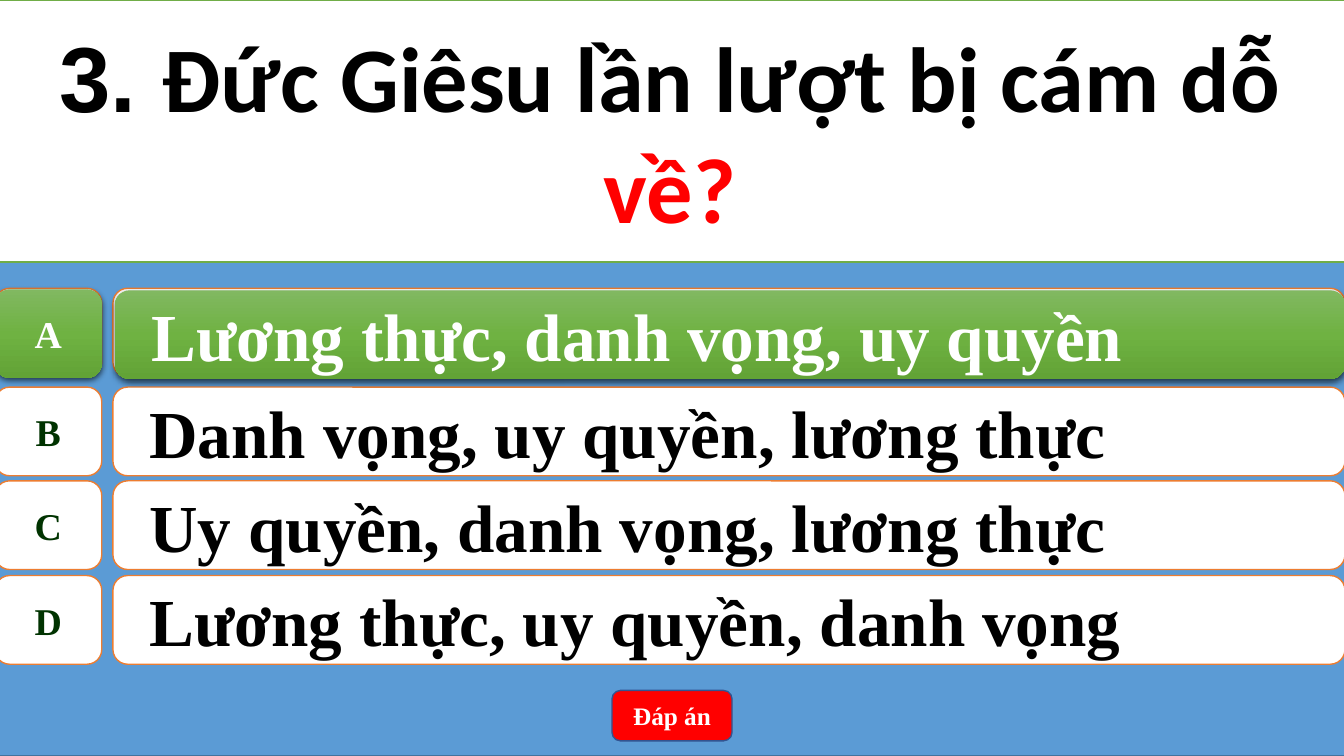
from copy import deepcopy
from pptx import Presentation
from pptx.dml.color import RGBColor
from pptx.enum.shapes import MSO_SHAPE as Shape
from pptx.enum.text import MSO_ANCHOR as Anchor, PP_ALIGN as Align
from pptx.oxml import parse_xml
from pptx.util import Inches, Pt

WHITE = RGBColor(0xFF, 0xFF, 0xFF)
BLACK = RGBColor(0, 0, 0)
RED = RGBColor(0xFF, 0, 0)
BLUE = RGBColor(0x5B, 0x9B, 0xD5)
NAVY = RGBColor(0x43, 0x73, 0x9E)
INDIGO = RGBColor(0x32, 0x54, 0x91)
ORANGE = RGBColor(0xED, 0x7D, 0x31)
FOREST = RGBColor(0, 0x33, 0)
GREEN = RGBColor(0x70, 0xAD, 0x47)
GREENS = [RGBColor(0x81, 0xB8, 0x61), RGBColor(0x6F, 0xB2, 0x42),
          RGBColor(0x62, 0xA3, 0x36)]
SERIF = "Times New Roman"
LEFT, WIDE = -0.05, 13.39
SHADOW = (
    '<a:effectLst xmlns:a="http://schemas.openxmlformats.org/drawingml/2006/main">'
    '<a:outerShdw blurRad="57150" dist="19050" dir="5400000" algn="ctr" '
    'rotWithShape="0"><a:srgbClr val="000000"><a:alpha val="63000"/></a:srgbClr>'
    '</a:outerShdw></a:effectLst>')

ANSWERS = [
    ("A", "Lương thực, danh vọng, uy quyền", 2.86),
    ("B", "Danh vọng, uy quyền, lương thực", 3.84),
    ("C", "Uy quyền, danh vọng, lương thực", 4.77),
    ("D", "Lương thực, uy quyền, danh vọng", 5.71),
]


def add_box(shapes, kind, box, fill, line):
    shape = shapes.add_shape(kind, *(Inches(n) for n in box))
    shape.shadow.inherit = False
    shape.fill.solid()
    shape.fill.fore_color.rgb = fill
    shape.line.color.rgb = line
    shape.line.width = Pt(1)
    return shape


def set_text(shape, text, size, color, align=Align.CENTER, wrap=True):
    frame = shape.text_frame
    frame.word_wrap = wrap
    frame.vertical_anchor = Anchor.MIDDLE
    para = frame.paragraphs[0]
    para.text = text
    para.alignment = align
    font = para.font
    font.name, font.size, font.bold = SERIF, Pt(size), True
    font.color.rgb = color
    return para


def set_glow(shape):
    """Green gradient from top to bottom, no outline, soft shadow below."""
    shape.line.fill.background()
    shape.fill.gradient()
    shape.fill.gradient_angle = 270
    first = shape.fill.gradient_stops[0]._gs
    first.addnext(deepcopy(first))
    for i, (stop, color) in enumerate(zip(shape.fill.gradient_stops, GREENS)):
        stop.position = i / 2
        stop.color.rgb = color
    props = shape._element.spPr
    props.replace(props.effectLst, parse_xml(SHADOW))


def add_row(slide, letter, answer, box, right=False):
    """One answer: letter tile at the left, wide card up to the right edge."""
    left, top, width, height = box
    shapes = slide.shapes.add_group_shape().shapes
    start = 1.19 if right else 1.17
    drop = 0.01 if right else 0
    tile = add_box(shapes, Shape.FLOWCHART_ALTERNATE_PROCESS,
                   (left, top, 1.06, height), WHITE, ORANGE)
    set_text(tile, letter, 27, WHITE if right else FOREST, wrap=False)
    card = add_box(shapes, Shape.ROUNDED_RECTANGLE,
                   (left + start, top + drop, width - start, height),
                   WHITE, ORANGE)
    para = set_text(card, answer, 48, WHITE if right else BLACK, Align.LEFT)
    para.level = 1
    props = para._p.get_or_add_pPr()
    props.set("marL", str(Inches(0.5)))
    props.set("indent", str(Inches(-0.28)))
    if right:
        set_glow(tile)
        set_glow(card)


def add_title(slide, box):
    panel = add_box(slide.shapes, Shape.RECTANGLE, box, WHITE, GREEN)
    para = set_text(panel, "", 66, BLACK)
    for text, name, color in [("3. ", "Arial", BLACK),
                              ("Đức Giêsu lần lượt bị cám dỗ ", "Calibri", BLACK),
                              ("về?", "Calibri", RED)]:
        run = para.add_run()
        run.text = text
        run.font.name = name
        run.font.color.rgb = color


def add_button(slide, box):
    button = add_box(slide.shapes, Shape.ROUNDED_RECTANGLE, box, RED, INDIGO)
    set_text(button, "Đáp án", 18, WHITE)


def main():
    deck = Presentation()
    deck.slide_width, deck.slide_height = Inches(13.33), Inches(7.5)
    slide = deck.slides.add_slide(deck.slide_layouts[6])
    # Backdrop
    add_box(slide.shapes, Shape.RECTANGLE, (LEFT, 0, WIDE, 7.5), BLUE, NAVY)
    # Answers, then the right one highlighted
    for letter, answer, top in ANSWERS:
        add_row(slide, letter, answer, (LEFT, top, WIDE, 0.88))
    letter, answer, top = ANSWERS[0]
    add_row(slide, letter, answer, (LEFT, top + 0.01, WIDE, 0.88), right=True)
    # Button and question
    add_button(slide, (6.07, 6.85, 1.19, 0.5))
    add_title(slide, (LEFT, 0, WIDE, 2.6))
    deck.save("out.pptx")


if __name__ == "__main__":
    main()
